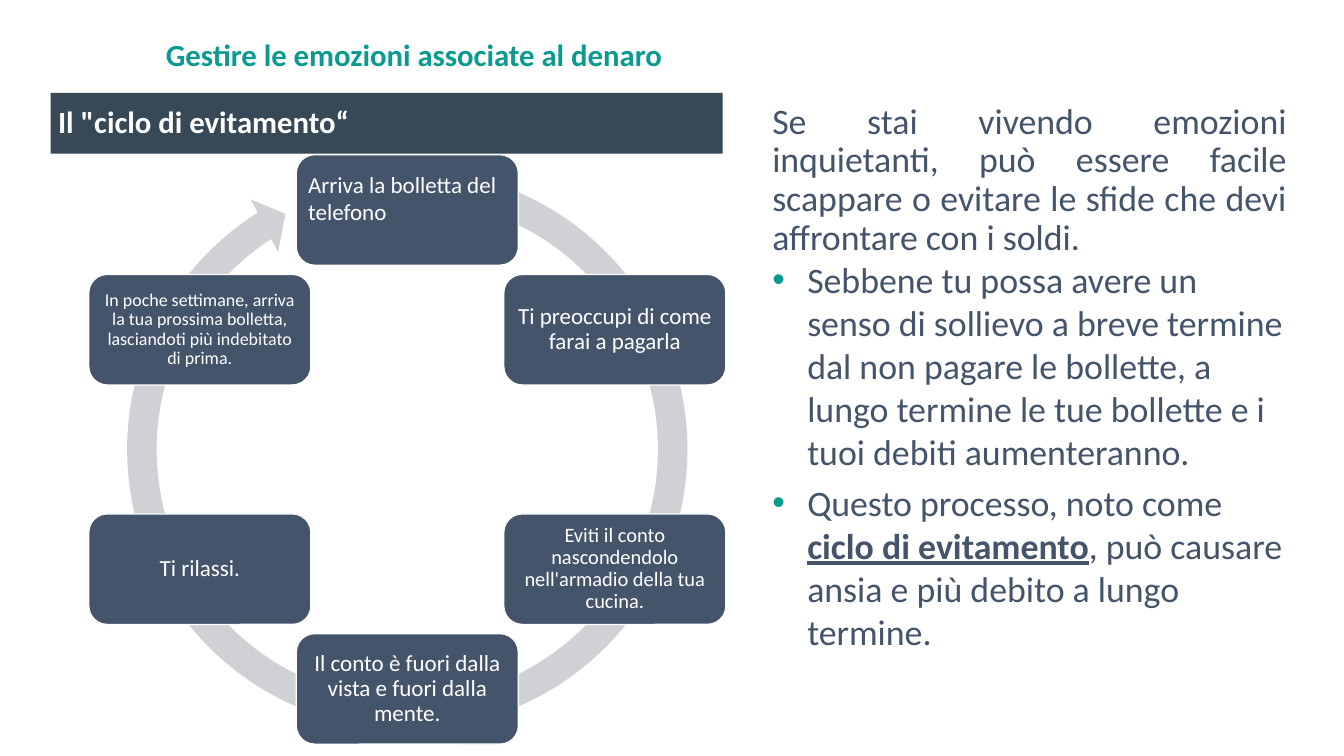
from math import cos, radians, sin
from lxml.etree import SubElement
from pptx import Presentation
from pptx.dml.color import RGBColor
from pptx.enum.shapes import MSO_SHAPE
from pptx.enum.text import MSO_ANCHOR, PP_ALIGN
from pptx.oxml.ns import qn
from pptx.util import Inches, Pt

HUES = {"teal": "0A9A8F", "slate": "44546A", "bar": "374856",
        "ring": "CFD1D4", "white": "FFFFFF"}


def hue(name):
    return RGBColor.from_string(HUES[name])


def write(para, text, size, color, bold=False):
    """Add one run to a paragraph and return its font."""
    run = para.add_run()
    run.text = text
    font = run.font
    font.name, font.size, font.bold = "Calibri", Pt(size), bold
    font.color.rgb = hue(color)
    return font


deck = Presentation()
deck.slide_width, deck.slide_height = Pt(1050), Pt(591)
slide = deck.slides.add_slide(deck.slide_layouts[5])
shapes = slide.shapes

# Title
title = shapes.title
title.left, title.top = Inches(1.72), Inches(0.22)
title.width, title.height = Inches(12.15), Inches(0.79)
frame = title.text_frame
frame.vertical_anchor = MSO_ANCHOR.MIDDLE
frame.margin_left = frame.margin_right = Inches(0.08)
para = frame.paragraphs[0]
para.alignment, para.line_spacing = PP_ALIGN.LEFT, 0.9
write(para, "Gestire le emozioni associate al denaro", 24, "teal", True)

# Heading bar
bar = shapes.add_shape(MSO_SHAPE.RECTANGLE, Inches(0.55), Inches(1.01),
                       Inches(7.29), Inches(0.66))
bar.shadow.inherit = False
bar.fill.solid()
bar.fill.fore_color.rgb = hue("bar")
bar.line.fill.background()
frame = bar.text_frame
frame.margin_left = frame.margin_right = Inches(0.08)
frame.vertical_anchor = MSO_ANCHOR.MIDDLE
para = frame.paragraphs[0]
para.alignment, para.line_spacing = PP_ALIGN.LEFT, 0.9
write(para, 'Il "ciclo di evitamento“', 24, "white", True)

# Cycle: a ring with six steps, 60 degrees apart
mid_x, mid_y, reach = 4.42, 4.88, 2.6
wide, high, span = 2.41, 1.2, 6.4
ring = shapes.add_shape(MSO_SHAPE.CIRCULAR_ARROW, Inches(mid_x - span / 2),
                        Inches(mid_y - span / 2), Inches(span), Inches(span))
for index, value in enumerate([0.05, 3.13, 142.47, 171.16, 0.05]):
    ring.adjustments[index] = value
ring.shadow.inherit = False
ring.fill.solid()
ring.fill.fore_color.rgb = hue("ring")
ring.line.fill.background()

steps = [
    ("Arriva la bolletta del telefono", 18),
    ("Ti preoccupi di come farai a pagarla", 18),
    ("Eviti il conto nascondendolo nell'armadio della tua cucina.", 16),
    ("Il conto è fuori dalla vista e fuori dalla mente.", 18),
    ("Ti rilassi.", 18),
    ("In poche settimane, arriva la tua prossima bolletta, "
     "lasciandoti più indebitato di prima.", 14),
]
for index, (text, size) in enumerate(steps):
    turn = radians(60 * index)
    left = mid_x + reach * sin(turn) - wide / 2
    top = mid_y - reach * cos(turn) - high / 2
    box = shapes.add_shape(MSO_SHAPE.ROUNDED_RECTANGLE, Inches(left),
                           Inches(top), Inches(wide), Inches(high))
    box.shadow.inherit = False
    box.fill.solid()
    box.fill.fore_color.rgb = hue("slate")
    box.line.color.rgb = hue("white")
    box.line.width = Pt(1)
    frame = box.text_frame
    frame.word_wrap = True
    frame.vertical_anchor = MSO_ANCHOR.MIDDLE
    frame.margin_left = frame.margin_right = Inches(0.07)
    para = frame.paragraphs[0]
    para.alignment, para.line_spacing = PP_ALIGN.CENTER, 0.9
    if index == 0:
        para.alignment, para.line_spacing = PP_ALIGN.LEFT, 1.0
        frame.margin_bottom = Inches(0.31)
    write(para, text, size, "white")

# Explanation
body = shapes.add_textbox(Inches(8.3), Inches(1.07), Inches(5.74), Inches(6.4))
frame = body.text_frame
frame.word_wrap = True
frame.margin_left = frame.margin_right = Inches(0.08)
intro = frame.paragraphs[0]
intro.alignment, intro.line_spacing = PP_ALIGN.JUSTIFY, 0.9
write(intro, "Se stai vivendo emozioni inquietanti, può essere facile scappare "
      "o evitare le sfide che devi affrontare con i soldi.", 28, "slate")

points = [
    [("Sebbene tu possa avere un senso di sollievo a breve termine dal non "
      "pagare le bollette, a lungo termine le tue bollette e i tuoi debiti "
      "aumenteranno.", False)],
    [("Questo processo, noto come ", False), ("ciclo di evitamento", True),
     (", può causare ansia e più debito a lungo termine.", False)],
]
for point in points:
    para = frame.add_paragraph()
    para.line_spacing, para.space_after = 1.0, Pt(6)
    for text, key in point:
        write(para, text, 28, "slate", key).underline = key
    props = para._p.get_or_add_pPr()
    props.set("marL", str(Inches(0.38)))
    props.set("indent", str(-Inches(0.38)))
    tint = SubElement(props, qn("a:buClr"))
    SubElement(tint, qn("a:srgbClr"), val=HUES["teal"])
    SubElement(props, qn("a:buFont"), typeface="Arial")
    SubElement(props, qn("a:buChar"), char="•")

deck.save("out.pptx")
